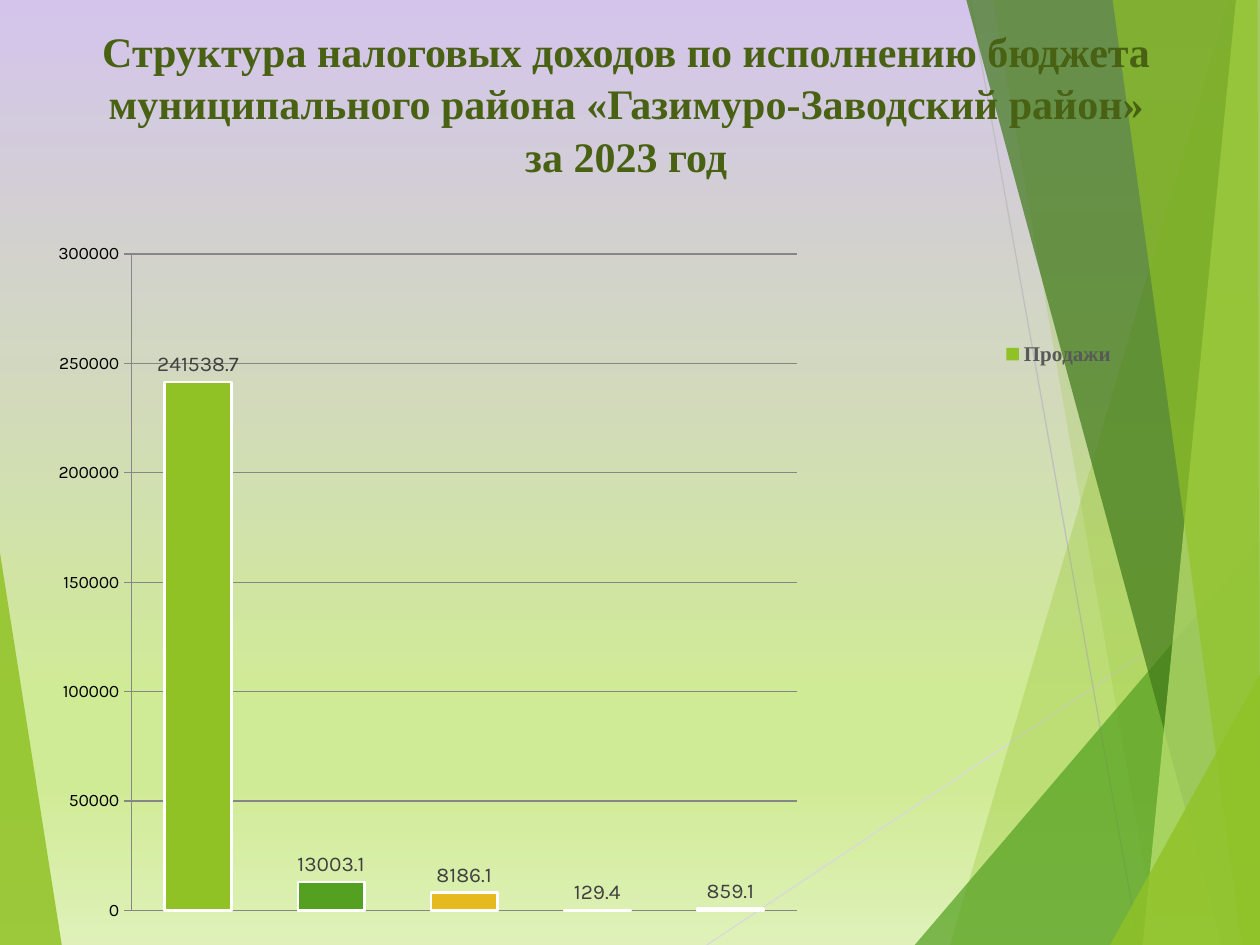
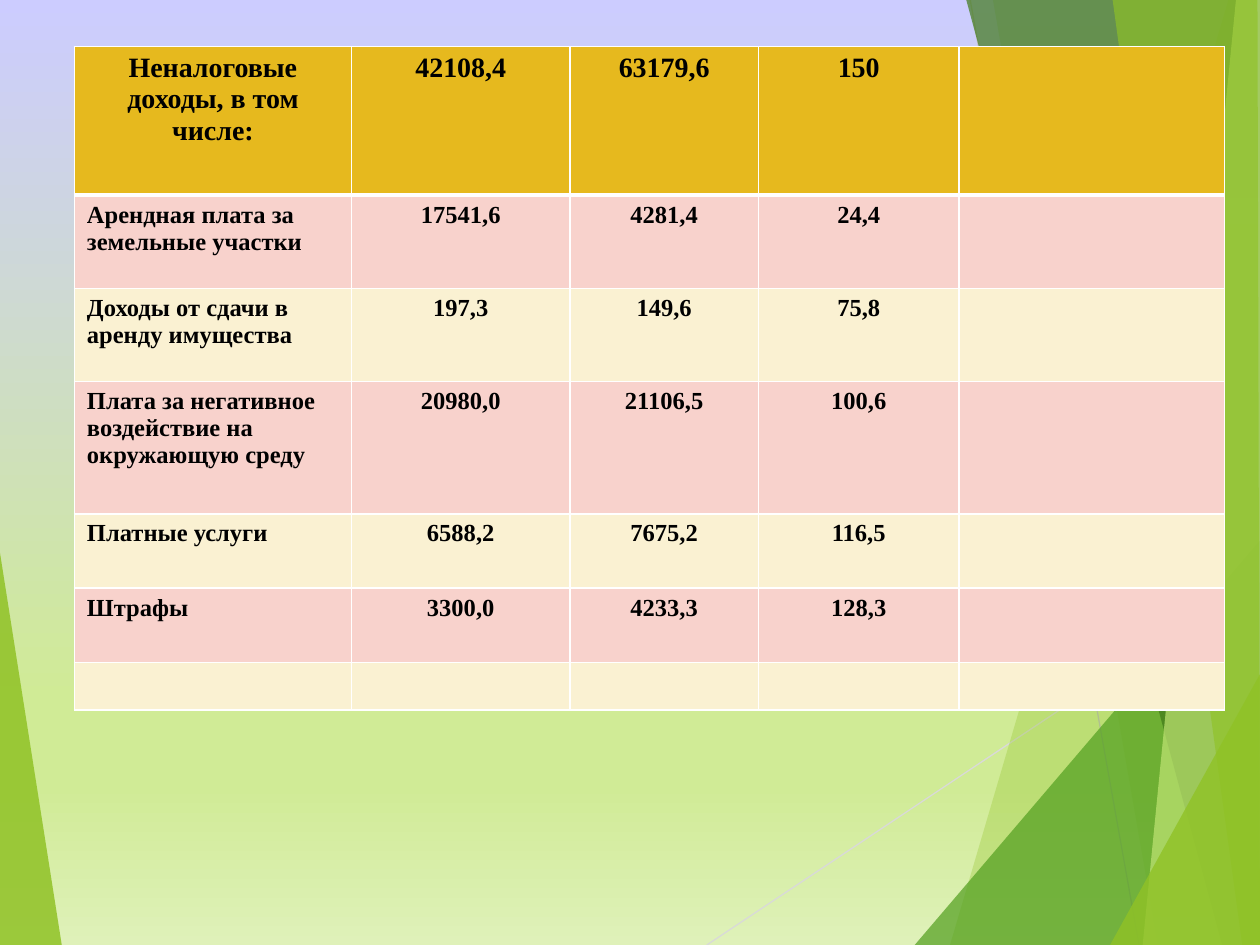
import copy
from dataclasses import dataclass

import pptx
import pptx.chart.data
import pptx.dml.color
import pptx.enum.chart
import pptx.enum.text
import pptx.oxml
import pptx.oxml.ns
import pptx.util
from lxml import etree

Pt = pptx.util.Pt
ALIGN = pptx.enum.text.PP_ALIGN
qn = pptx.oxml.ns.qn


@dataclass(frozen=True)
class Theme:
    serif: str = "Times New Roman"
    sans: str = "Karla"
    lime: str = "90C226"
    green: str = "54A021"
    dark: str = "3F7819"
    pale: str = "C0E474"
    gold: str = "E6B91E"
    rust: str = "E76618"
    red: str = "C42F1A"
    olive: str = "486113"
    rose: str = "F8D2CC"
    cream: str = "FAF1D2"
    lilac: str = "D4C4EC"
    blue: str = "CCCCFF"
    mint: str = "D0EB96"
    mist: str = "DFF1B9"
    silver: str = "D9D9D9"
    gray: str = "BFBFBF"
    grid: str = "868686"
    label: str = "404040"
    legend: str = "595959"
    black: str = "000000"
    white: str = "FFFFFF"
    title: float = 24
    head: float = 16
    body: float = 14
    note: float = 12
    axis: float = 10


T = Theme()

# Facets of the frame: colour, opacity in percent, corners in points
FACETS = [
    (T.lime, 85, [(0, 316), (35.3, 540), (0, 540)]),
    (T.lime, 30, [(702, 0), (542.9, 540), (720, 540), (720, 0)]),
    (T.lime, 20, [(567.4, 0), (661.7, 540), (720, 540), (720, 0)]),
    (T.green, 72, [(522.7, 540), (720, 308.9), (720, 540)]),
    (T.dark, 70, [(552.2, 0), (698.4, 540), (720, 540), (720, 0)]),
    (T.pale, 70, [(706.3, 0), (653, 540), (720, 540), (720, 0)]),
    (T.lime, 65, [(635.8, 0), (709.9, 540), (720, 540), (718.6, 0)]),
    (T.lime, 80, [(634.3, 540), (720, 385.2), (720, 540)]),
]
RAYS = [(T.silver, (403.9, 540, 720, 329.4)), (T.gray, (554.4, 0, 650.9, 540))]

TITLE = ("Структура налоговых доходов по исполнению бюджета муниципального "
         "района «Газимуро-Заводский район»\vза 2023 год")
TAXES = [241538.7, 13003.1, 8186.1, 129.4, 859.1]
BARS = [T.lime, T.green, T.gold, T.rust, T.red]

COLS = [158.4, 124.8, 107.7, 114.7, 151.8]
ROWS = [
    (84.9, ["Неналоговые доходы, в том числе:", "42108,4", "63179,6", "150", ""]),
    (53.3, ["Арендная плата за земельные участки", "17541,6", "4281,4", "24,4", ""]),
    (53.3, ["Доходы от сдачи в аренду имущества", "197,3", "149,6", "75,8", ""]),
    (75.6, ["Плата за негативное воздействие на окружающую среду",
            "20980,0", "21106,5", "100,6", ""]),
    (42.5, ["Платные услуги", "6588,2", "7675,2", "116,5", ""]),
    (42.5, ["Штрафы", "3300,0", "4233,3", "128,3", ""]),
    (27, [""] * 5),
]


def rgb(code):
    return pptx.dml.color.RGBColor.from_string(code)


def style(font, size, color, face=T.serif, bold=False):
    font.size, font.name, font.bold = Pt(size), face, bold
    font.color.rgb = rgb(color)


def write(frame, text, align=ALIGN.LEFT, space=None, **form):
    """Put text into a frame; form goes to the font."""
    para = frame.paragraphs[0]
    para.alignment = align
    if space:
        para.line_spacing = space
    if not text:
        para._p.get_or_add_endParaRPr().set("sz", str(form["size"] * 100))
        return
    para.text = text
    for run in para.runs:
        style(run.font, **form)


def place(owner, x, y, w, h, inner=False):
    """Give a plot area or legend a manual layout."""
    for old in owner.findall(qn("c:layout")):
        owner.remove(old)
    layout = etree.Element(qn("c:layout"))
    box = etree.SubElement(layout, qn("c:manualLayout"))
    rules = [("layoutTarget", "inner")] if inner else []
    rules += [("xMode", "edge"), ("yMode", "edge"),
              ("x", x), ("y", y), ("w", w), ("h", h)]
    for tag, val in rules:
        etree.SubElement(box, qn("c:" + tag)).set("val", str(val))
    pos = owner.find(qn("c:legendPos"))
    owner.insert(0 if pos is None else 1, layout)


def border(cell, **widths):
    """Draw white cell edges; keys are L, R, T, B in that order."""
    props = cell._tc.get_or_add_tcPr()
    for i, (side, width) in enumerate(widths.items()):
        line = etree.Element(qn("a:ln" + side), w=str(Pt(width)))
        fill = etree.SubElement(line, qn("a:solidFill"))
        etree.SubElement(fill, qn("a:srgbClr"), val=T.white)
        props.insert(i, line)


class Deck:
    def __init__(self):
        self.prs = pptx.Presentation()
        self.prs.slide_width, self.prs.slide_height = Pt(720), Pt(540)
        self.slide = None

    def page(self, top):
        self.slide = self.prs.slides.add_slide(self.prs.slide_layouts[6])
        self.back([(0, top), (0.74, T.mint), (0.83, T.mint), (1, T.mist)])
        self.facet(*FACETS[0])
        for color, ends in RAYS:
            self.ray(color, ends)
        for facet in FACETS[1:]:
            self.facet(*facet)

    def back(self, stops):
        fill = self.slide.background.fill
        fill.gradient()
        fill.gradient_angle = 270
        group = self.slide.element.xpath(".//p:bg//a:gsLst")[0]
        while len(group) < len(stops):
            group.append(copy.deepcopy(group[0]))
        for stop, (pos, color) in zip(fill.gradient_stops, stops):
            stop.position = pos
            stop.color.rgb = rgb(color)

    def facet(self, color, alpha, dots):
        dots = [(Pt(x), Pt(y)) for x, y in dots]
        path = self.slide.shapes.build_freeform(*dots[0])
        path.add_line_segments(dots[1:], close=True)
        shape = path.convert_to_shape()
        shape.shadow.inherit = False
        shape.fill.solid()
        shape.fill.fore_color.rgb = rgb(color)
        shape.line.fill.background()
        tint = shape._element.xpath("./p:spPr/a:solidFill/a:srgbClr")[0]
        etree.SubElement(tint, qn("a:alpha")).set("val", str(alpha * 1000))

    def ray(self, color, ends):
        line = self.slide.shapes.add_connector(1, *map(Pt, ends))
        line.line.color.rgb = rgb(color)
        line.line.width = Pt(0.75)
        etree.SubElement(line._element.spPr, qn("a:effectLst"))

    def title(self, text, *box):
        frame = self.slide.shapes.add_textbox(*map(Pt, box)).text_frame
        frame.word_wrap = True
        write(frame, text, align=ALIGN.CENTER, space=1.05,
              size=T.title, color=T.olive, bold=True)

    def chart(self, name, vals, fills, *box):
        data = pptx.chart.data.CategoryChartData()
        data.categories = [str(i + 1) for i in range(len(vals))]
        data.add_series(name, vals)
        kinds = pptx.enum.chart
        chart = self.slide.shapes.add_chart(
            kinds.XL_CHART_TYPE.COLUMN_CLUSTERED, *map(Pt, box), data).chart
        chart.has_title = False
        style(chart.font, T.axis, T.black, T.sans)

        # Axes
        chart.category_axis.visible = False
        axis = chart.value_axis
        axis.minimum_scale, axis.maximum_scale = 0, 300000
        axis.major_unit = 50000
        axis.major_tick_mark = kinds.XL_TICK_MARK.OUTSIDE
        for line in (axis.format.line, axis.major_gridlines.format.line):
            line.color.rgb = rgb(T.grid)
            line.width = Pt(0.75)

        # Bars and their labels
        plot = chart.plots[0]
        plot.gap_width, plot.vary_by_categories = 100, False
        bars = plot.series[0]
        bars.format.fill.solid()
        bars.format.fill.fore_color.rgb = rgb(T.lime)
        for i, color in enumerate(fills):
            form = bars.points[i].format
            form.fill.solid()
            form.fill.fore_color.rgb = rgb(color)
            form.line.color.rgb = rgb(T.white)
            form.line.width = Pt(1.5)
        plot.has_data_labels = True
        tags = plot.data_labels
        tags.show_value = True
        tags.position = kinds.XL_LABEL_POSITION.OUTSIDE_END
        style(tags.font, T.note, T.label, T.sans)

        # Legend and layout
        chart.has_legend = True
        legend = chart.legend
        legend.position = kinds.XL_LEGEND_POSITION.BOTTOM
        legend.include_in_layout = False
        style(legend.font, T.note, T.legend, bold=True)
        place(legend._element, 0.76, 0.15, 0.14, 0.03)
        area = chart._chartSpace.xpath("./c:chart/c:plotArea")[0]
        place(area, 0.061, 0.061, 0.552, 0.682, inner=True)

    def table(self, cols, rows, left, top):
        high = sum(row[0] for row in rows)
        box = map(Pt, (left, top, sum(cols), high))
        table = self.slide.shapes.add_table(len(rows), len(cols), *box).table
        for col, width in zip(table.columns, cols):
            col.width = Pt(width)
        for r, (height, texts) in enumerate(rows):
            table.rows[r].height = Pt(height)
            shade = T.gold if r == 0 else (T.cream, T.rose)[r % 2]
            for c, text in enumerate(texts):
                cell = table.cell(r, c)
                cell.fill.solid()
                cell.fill.fore_color.rgb = rgb(shade)
                border(cell, L=1, R=1, T=3 if r == 1 else 1, B=1 if r else 3)
                write(cell.text_frame, text,
                      align=ALIGN.LEFT if r and c == 0 else ALIGN.CENTER,
                      size=T.body if r else T.head, color=T.black, bold=True)


def main():
    deck = Deck()

    # Tax income chart
    deck.page(T.lilac)
    deck.title(TITLE, 49.7, 9.4, 616.3, 136)
    deck.chart("Продажи", TAXES, BARS, 33.1, 111.6, 689, 550)

    # Non-tax income table
    deck.page(T.blue)
    deck.table(COLS, ROWS, 42.5, 26.6)

    deck.prs.save("out.pptx")


if __name__ == "__main__":
    main()
